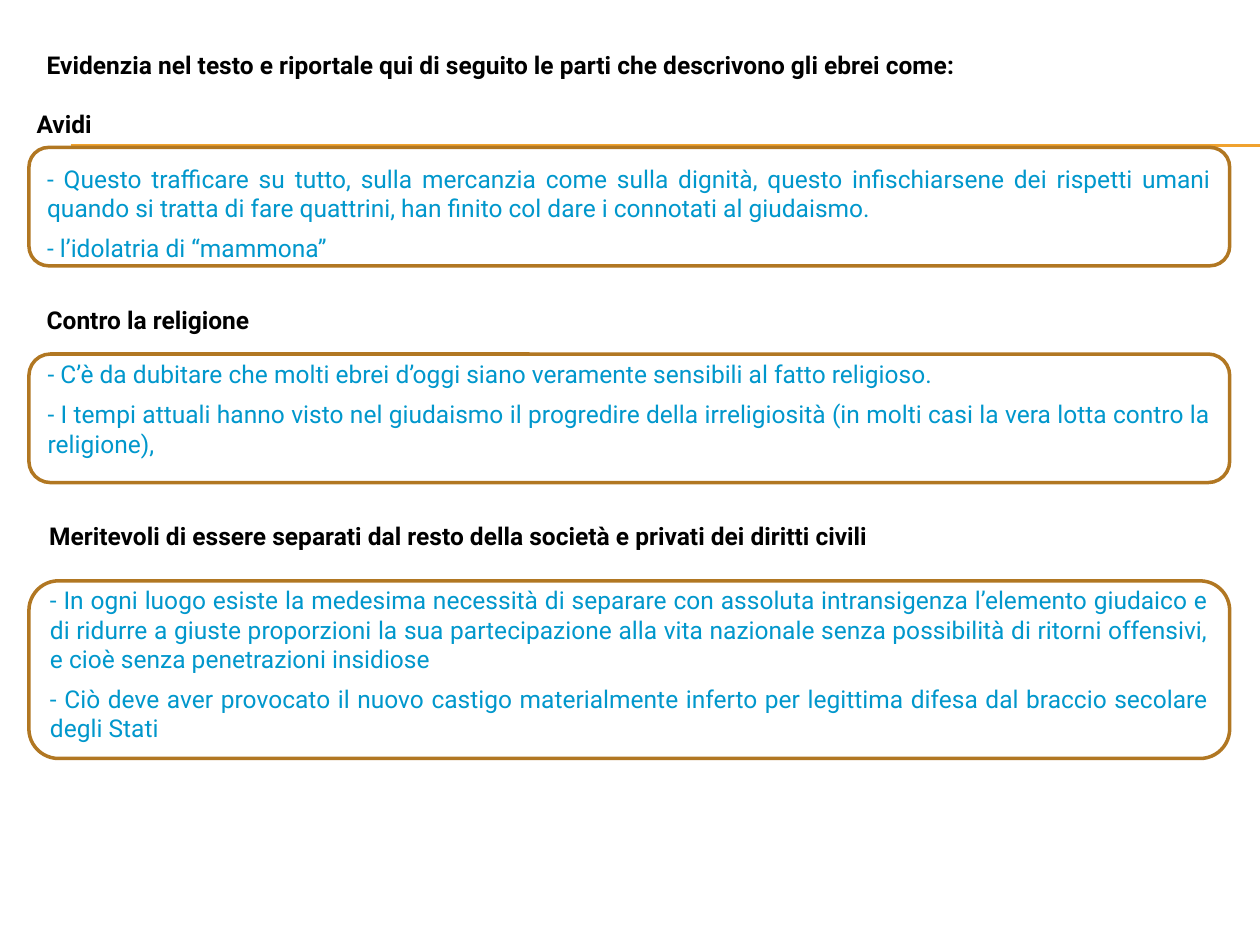
from dataclasses import dataclass

from lxml.etree import SubElement
from pptx import Presentation
from pptx.dml.color import RGBColor
from pptx.enum.shapes import MSO_CONNECTOR, MSO_SHAPE
from pptx.enum.text import MSO_ANCHOR, MSO_AUTO_SIZE, PP_ALIGN
from pptx.oxml.ns import qn
from pptx.util import Inches, Pt


@dataclass(frozen=True)
class Theme:
    font: str = "Roboto"
    size: int = 14
    gap: int = 6
    head: RGBColor = RGBColor(0x00, 0x00, 0x00)
    body: RGBColor = RGBColor(0x00, 0x97, 0xCC)
    fill: RGBColor = RGBColor(0xFF, 0xFF, 0xFF)
    edge: RGBColor = RGBColor(0xB1, 0x77, 0x22)
    rule: RGBColor = RGBColor(0xF0, 0xA2, 0x2E)


THEME = Theme()
LEFT, WIDTH = 0.23, 9.53
HEAD_H = 0.4

TITLE = "Evidenzia nel testo e riportale qui di seguito le parti che descrivono gli ebrei come:"

# Heading, its left and middle; box top and height; top and bottom margins; quotes
PARTS = [
    ("Avidi", 0.29, 0.98, 1.17, 0.94, (0.1, 0), [
        "- Questo trafficare su tutto, sulla mercanzia come sulla dignità, "
        "questo infischiarsene dei rispetti umani quando si tratta di fare "
        "quattrini, han finito col dare i connotati al giudaismo.",
        "- l’idolatria di “mammona”",
    ]),
    ("Contro la religione", 0.37, 2.54, 2.81, 1.02, (0, 0.15), [
        "- C’è da dubitare che molti ebrei d’oggi siano veramente sensibili "
        "al fatto religioso.",
        "- I tempi attuali hanno visto nel giudaismo il progredire della "
        "irreligiosità (in molti casi la vera lotta contro la religione),",
    ]),
    ("Meritevoli di essere separati dal resto della società e privati dei diritti civili",
     0.39, 4.25, 4.61, 1.41, (0, 0.09), [
        "- In ogni luogo esiste la medesima necessità di separare con assoluta "
        "intransigenza l’elemento giudaico e di ridurre a giuste proporzioni "
        "la sua partecipazione alla vita nazionale senza possibilità di "
        "ritorni offensivi, e cioè senza penetrazioni insidiose",
        "- Ciò deve aver provocato il nuovo castigo materialmente inferto per "
        "legittima difesa dal braccio secolare degli Stati",
    ]),
]


def set_text(shape, lines, color, bold, sides, ends):
    """Write justified paragraphs; sides and ends are margins in inches."""
    frame = shape.text_frame
    frame.text = "\n".join(lines)
    frame.word_wrap = True
    frame.auto_size = MSO_AUTO_SIZE.NONE
    frame.vertical_anchor = MSO_ANCHOR.MIDDLE
    frame.margin_left = frame.margin_right = Inches(sides)
    frame.margin_top, frame.margin_bottom = map(Inches, ends)
    for i, para in enumerate(frame.paragraphs):
        para.alignment = PP_ALIGN.JUSTIFY
        para.space_before = Pt(THEME.gap if i else 0)
        for run in para.runs:
            font = run.font
            font.name, font.size, font.bold = THEME.font, Pt(THEME.size), bold
            font.color.rgb = color


def add_rule(slide, y):
    line = slide.shapes.add_connector(
        MSO_CONNECTOR.STRAIGHT, Inches(0.56), Inches(y), Inches(10), Inches(y))
    line.line.color.rgb = THEME.rule
    line.line.width = Pt(0.75)
    SubElement(line._element.spPr, qn("a:effectLst"))


def set_title(slide, text):
    title = slide.shapes.title
    title.left, title.top = Inches(0.37), Inches(0.31)
    title.width, title.height = Inches(9.2), Inches(HEAD_H)
    set_text(title, [text], THEME.head, True, 0, (0, 0))


def add_head(slide, text, left, mid):
    box = slide.shapes.add_textbox(
        Inches(left), Inches(mid - HEAD_H / 2), Inches(9.2), Inches(HEAD_H))
    set_text(box, [text], THEME.head, True, 0, (0, 0))


def add_panel(slide, top, height, ends, quotes):
    panel = slide.shapes.add_shape(
        MSO_SHAPE.ROUNDED_RECTANGLE,
        Inches(LEFT), Inches(top), Inches(WIDTH), Inches(height))
    panel.shadow.inherit = False
    panel.fill.solid()
    panel.fill.fore_color.rgb = THEME.fill
    panel.line.color.rgb = THEME.edge
    panel.line.width = Pt(2)
    set_text(panel, quotes, THEME.body, False, 0.1, ends)


def main():
    deck = Presentation()
    deck.slide_width, deck.slide_height = Inches(10), Inches(7.5)
    slide = deck.slides.add_slide(deck.slide_layouts[5])
    set_title(slide, TITLE)
    for y in (1.15, 1.16):
        add_rule(slide, y)
    for head, left, mid, top, height, ends, quotes in PARTS:
        add_head(slide, head, left, mid)
        add_panel(slide, top, height, ends, quotes)
    deck.save("out.pptx")


if __name__ == "__main__":
    main()
